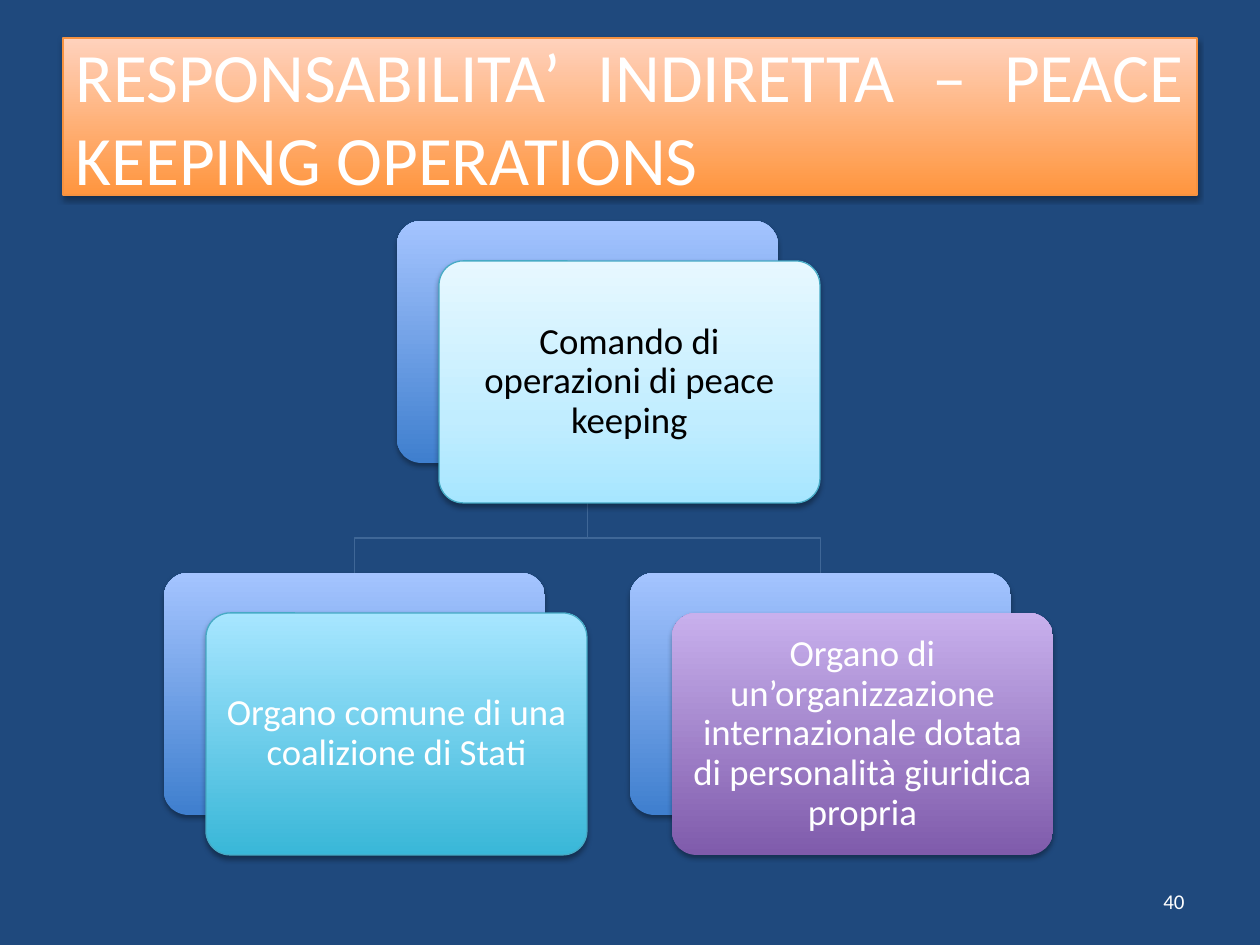
from copy import deepcopy

from lxml.etree import SubElement
from pptx import Presentation
from pptx.dml.color import RGBColor
from pptx.enum.shapes import MSO_SHAPE
from pptx.enum.text import MSO_ANCHOR, MSO_AUTO_SIZE, PP_ALIGN
from pptx.oxml.ns import qn
from pptx.util import Emu, Pt

EMU_PER_PX = 914400 / 126

NAVY = RGBColor(0x1F, 0x49, 0x7D)
WHITE = RGBColor(0xFF, 0xFF, 0xFF)
BLACK = RGBColor(0x00, 0x00, 0x00)
ORANGE_LINE = RGBColor(0xF6, 0x92, 0x40)
AQUA_LINE = RGBColor(0x46, 0xAA, 0xC5)
BRANCH_LINE = RGBColor(0x3F, 0x67, 0x97)

# Gradient stops run from the bottom edge to the top edge.
ORANGE = [(0, RGBColor(0xFF, 0x95, 0x3E)), (1, RGBColor(0xFF, 0xD2, 0xBD))]
BLUE = [(0, RGBColor(0x3F, 0x7F, 0xCE)), (1, RGBColor(0xA4, 0xC4, 0xFF))]
PALE_AQUA = [(0, RGBColor(0xA7, 0xE6, 0xFF)), (0.35, RGBColor(0xC1, 0xED, 0xFF)),
             (1, RGBColor(0xE7, 0xF8, 0xFF))]
AQUA = [(0, RGBColor(0x39, 0xB7, 0xD8)), (1, RGBColor(0xA7, 0xE6, 0xFF))]
PURPLE = [(0, RGBColor(0x7F, 0x5B, 0xAB)), (1, RGBColor(0xC8, 0xB0, 0xED))]

CARD_WIDTH, CARD_HEIGHT = 381, 242
FRONT_SHIFT_X, FRONT_SHIFT_Y = 42, 40
TOP_ROW, BOTTOM_ROW = 221, 573
LEFT_CARD, RIGHT_CARD = 164, 630
TOP_CARD = (LEFT_CARD + RIGHT_CARD) // 2


def px(length):
    return Emu(round(length * EMU_PER_PX))


def set_gradient(shape, stops):
    shape.fill.gradient()
    shape.fill.gradient_angle = 90
    stop_list = shape.fill.gradient_stops
    if len(stops) > len(stop_list):
        elements = shape.element.spPr.find(".//" + qn("a:gsLst"))
        for _ in range(len(stops) - len(stop_list)):
            elements.append(deepcopy(elements[-1]))
        stop_list = shape.fill.gradient_stops
    for stop, (position, color) in zip(stop_list, stops):
        stop.position = position
        stop.color.rgb = color


def set_line(shape, color):
    if color is None:
        shape.line.fill.background()
    else:
        shape.line.color.rgb = color
        shape.line.width = Pt(0.75)


def set_shadow(shape):
    """Give the shape a soft black shadow falling straight down."""
    shape.shadow.inherit = False
    effects = shape.element.spPr.find(qn("a:effectLst"))
    shadow = SubElement(effects, qn("a:outerShdw"), blurRad=str(Pt(3.1)),
                        dist=str(Pt(1.8)), dir="5400000", rotWithShape="0")
    color = SubElement(shadow, qn("a:srgbClr"), val="000000")
    SubElement(color, qn("a:alpha"), val="35000")


def set_text(shape, text, size, color=WHITE, align=PP_ALIGN.CENTER,
             line_spacing=None, inset=None):
    frame = shape.text_frame
    frame.word_wrap = True
    frame.auto_size = MSO_AUTO_SIZE.NONE
    frame.vertical_anchor = MSO_ANCHOR.MIDDLE
    if inset is not None:
        frame.margin_left = frame.margin_right = px(inset)
        frame.margin_top = frame.margin_bottom = px(inset)
    paragraph = frame.paragraphs[0]
    paragraph.alignment = align
    paragraph.line_spacing = line_spacing
    run = paragraph.add_run()
    run.text = text
    run.font.size = Pt(size)
    run.font.name = "Calibri"
    run.font.color.rgb = color


def add_title(slide, text):
    title = slide.shapes.title
    title.left, title.top, title.width, title.height = map(px, (63, 38, 1134, 157))
    set_gradient(title, ORANGE)
    set_line(title, ORANGE_LINE)
    set_shadow(title)
    set_text(title, text, 39.6, align=PP_ALIGN.JUSTIFY)


def add_branch(slide, child_left):
    """Draw the elbow from the top card down to a child card."""
    start_x = TOP_CARD + CARD_WIDTH / 2
    end_x = child_left + CARD_WIDTH / 2
    middle_y = 538
    builder = slide.shapes.build_freeform(px(start_x), px(TOP_ROW + CARD_HEIGHT))
    points = [(start_x, middle_y), (end_x, middle_y), (end_x, BOTTOM_ROW)]
    builder.add_line_segments([(px(x), px(y)) for x, y in points], close=False)
    branch = builder.convert_to_shape()
    branch.fill.background()
    set_line(branch, BRANCH_LINE)
    branch.shadow.inherit = False


def add_panel(slide, left, top, stops, line=None):
    panel = slide.shapes.add_shape(MSO_SHAPE.ROUNDED_RECTANGLE, px(left), px(top),
                                   px(CARD_WIDTH), px(CARD_HEIGHT))
    panel.adjustments[0] = 0.1
    set_gradient(panel, stops)
    set_line(panel, line)
    set_shadow(panel)
    return panel


def add_card(slide, left, top, text, stops, line=None, color=WHITE):
    """Add a blue back panel with a text panel shifted in front of it."""
    add_panel(slide, left, top, BLUE)
    front = add_panel(slide, left + FRONT_SHIFT_X, top + FRONT_SHIFT_Y, stops, line)
    set_text(front, text, 21, color=color, line_spacing=0.9, inset=11)


def add_slide_number(slide, text):
    box = slide.shapes.add_textbox(px(903), px(876), px(294), px(50))
    set_text(box, text, 12, align=PP_ALIGN.RIGHT)


def main():
    presentation = Presentation()
    presentation.slide_width, presentation.slide_height = px(1260), px(945)
    slide = presentation.slides.add_slide(presentation.slide_layouts[5])
    slide.background.fill.solid()
    slide.background.fill.fore_color.rgb = NAVY

    add_title(slide, "RESPONSABILITA’ INDIRETTA – PEACE KEEPING OPERATIONS")
    for child_left in (RIGHT_CARD, LEFT_CARD):
        add_branch(slide, child_left)
    add_card(slide, TOP_CARD, TOP_ROW, "Comando di operazioni di peace keeping",
             PALE_AQUA, line=AQUA_LINE, color=BLACK)
    add_card(slide, LEFT_CARD, BOTTOM_ROW, "Organo comune di una coalizione di Stati",
             AQUA, line=AQUA_LINE)
    add_card(slide, RIGHT_CARD, BOTTOM_ROW,
             "Organo di un’organizzazione internazionale dotata di personalità "
             "giuridica propria", PURPLE)
    add_slide_number(slide, "40")
    presentation.save("out.pptx")


if __name__ == "__main__":
    main()
